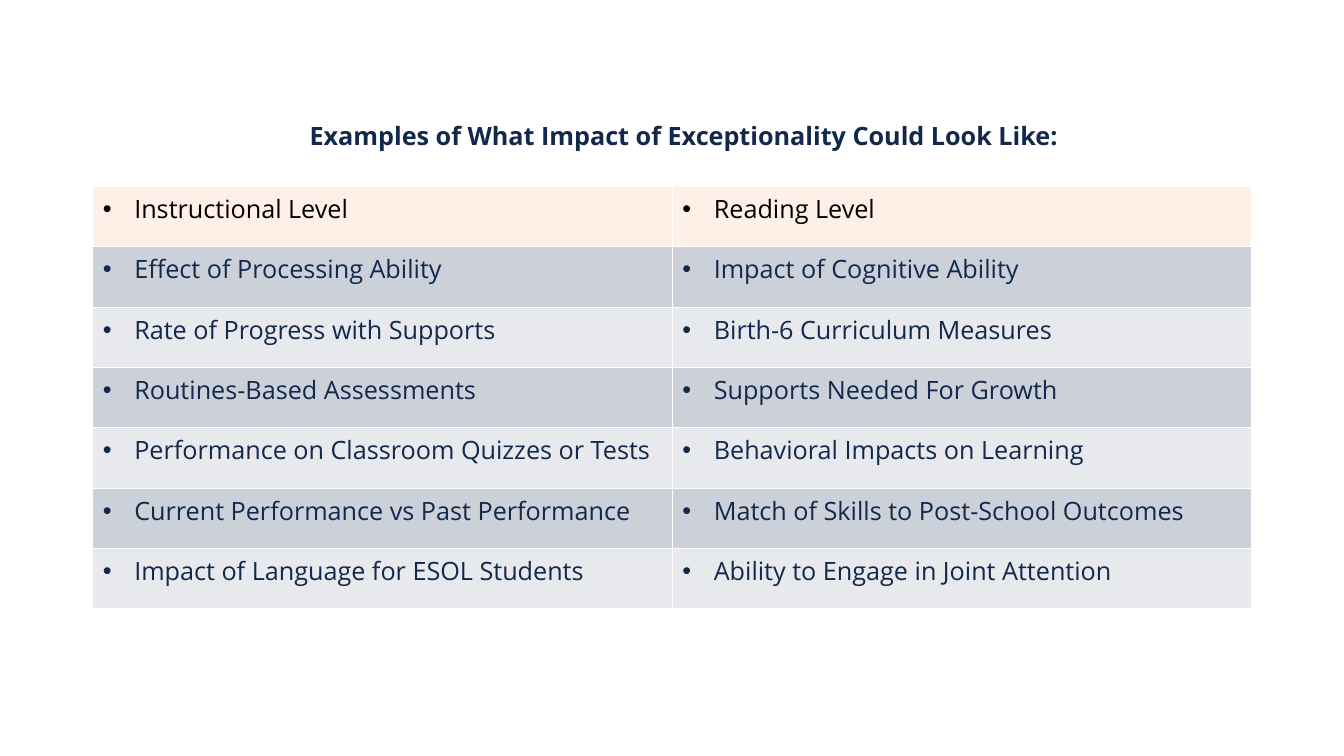
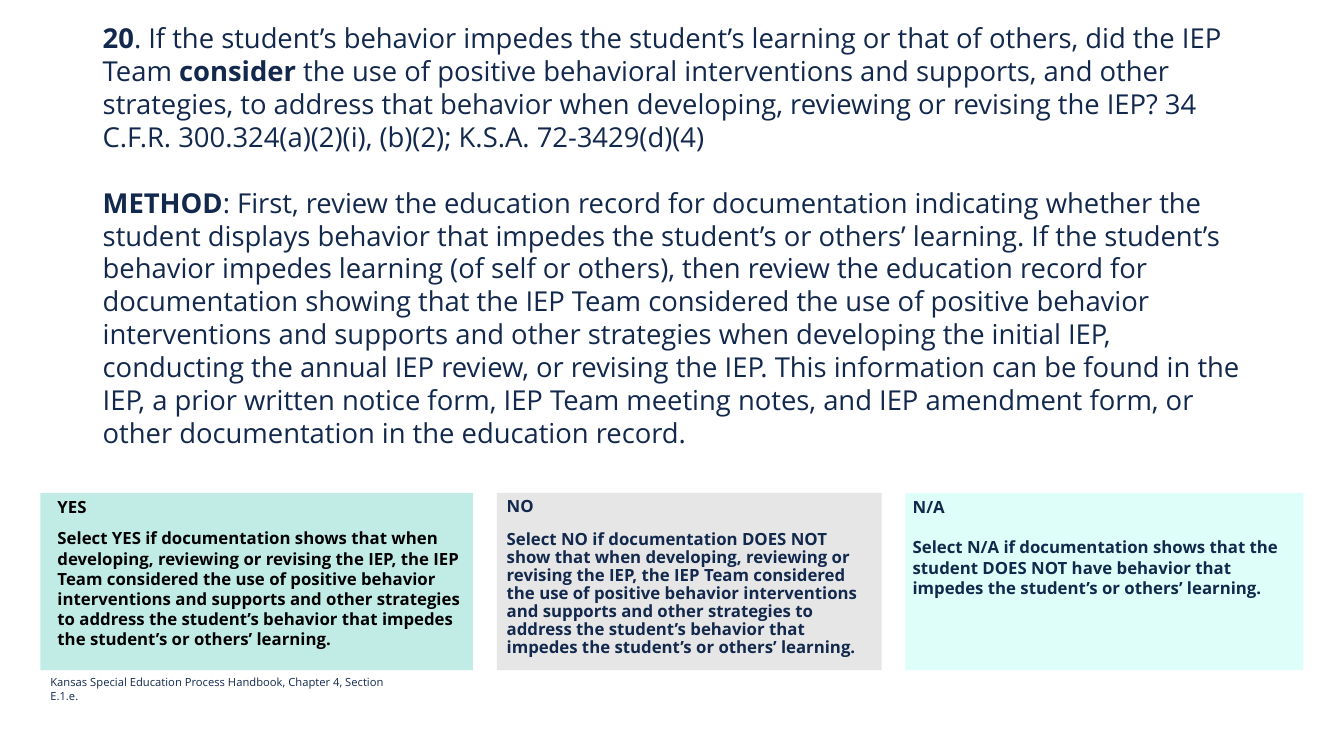
from lxml import etree
from pptx import Presentation
from pptx.dml.color import RGBColor
from pptx.enum import shapes, text
from pptx.oxml import ns
from pptx.util import Cm, Pt

FONT = "Open Sans"
NAVY = RGBColor(0x12, 0x28, 0x4C)
BLACK = RGBColor(0x00, 0x00, 0x00)
PEACH = RGBColor(0xFF, 0xF0, 0xE7)
BAND_DARK = RGBColor(0xCC, 0xD1, 0xD9)
BAND_LIGHT = RGBColor(0xE7, 0xE9, 0xED)
MINT = RGBColor(0xC1, 0xEC, 0xE5)
GREY = RGBColor(0xE6, 0xE6, 0xE6)
AQUA = RGBColor(0xDE, 0xFF, 0xF9)

CONTENT_LEFT = Cm(2.34)
CONTENT_WIDTH = Cm(29.21)

EXAMPLES = [
    ("Instructional Level", "Reading Level"),
    ("Effect of Processing Ability", "Impact of Cognitive Ability"),
    ("Rate of Progress with Supports", "Birth-6 Curriculum Measures"),
    ("Routines-Based Assessments", "Supports Needed For Growth"),
    ("Performance on Classroom Quizzes or Tests", "Behavioral Impacts on Learning"),
    ("Current Performance vs Past Performance", "Match of Skills to Post-School Outcomes"),
    ("Impact of Language for ESOL Students", "Ability to Engage in Joint Attention"),
]

QUESTION = [
    "**20**. If the student’s behavior impedes the student’s learning or that of others, "
    "did the IEP Team **consider** the use of positive behavioral interventions and supports, "
    "and other strategies, to address that behavior when developing, reviewing or revising "
    "the IEP? 34 C.F.R. 300.324(a)(2)(i), (b)(2); K.S.A. 72-3429(d)(4)",
    "**METHOD**: First, review the education record for documentation indicating whether the "
    "student displays behavior that impedes the student’s or others’ learning. If the "
    "student’s behavior impedes learning (of self or others), then review the education "
    "record for documentation showing that the IEP Team considered the use of positive "
    "behavior interventions and supports and other strategies when developing the initial "
    "IEP, conducting the annual IEP review, or revising the IEP. This information can be "
    "found in the IEP, a prior written notice form, IEP Team meeting notes, and IEP "
    "amendment form, or other documentation in the education record.",
]

CONSIDERED = (
    "show{} that when developing, reviewing or revising the IEP, the IEP Team considered the "
    "use of positive behavior interventions and supports and other strategies to address the "
    "student’s behavior that impedes the student’s or others’ learning."
)

# answer, guidance, width in cm, fill, margins in cm (side, top), text format
ANSWERS = [
    ("YES", "Select YES if documentation " + CONSIDERED.format("s"), 10.9, MINT, (0.18, 0.1),
     dict(color=BLACK, leading=14.4, gap=8, indent=Cm(0.25))),
    ("NO", "Select NO if documentation DOES NOT " + CONSIDERED.format(""), 9.7, GREY, (0.25, 0.13),
     dict(leading=12.9, gap=10.5)),
    ("N/A", "Select N/A if documentation shows that the student DOES NOT have behavior that "
     "impedes the student’s or others’ learning.", 10.03, AQUA, (0.18, 0.1),
     dict(leading=14.4, gap=14.4)),
]


def set_indent(paragraph, left, hanging=0, bullet=None):
    props = paragraph._p.get_or_add_pPr()
    props.set("marL", str(left))
    props.set("indent", str(-hanging))
    if bullet:
        etree.SubElement(props, ns.qn("a:buFont"), typeface="Arial")
        etree.SubElement(props, ns.qn("a:buChar"), char=bullet)


def write(frame, paragraphs, size=18, color=NAVY, bold=False, align=text.PP_ALIGN.LEFT,
          leading=None, gap=0, indent=0, hanging=0, bullet=None):
    """Fill a text frame; parts between ** marks are bold."""
    frame.word_wrap = True
    for index, content in enumerate(paragraphs):
        paragraph = frame.paragraphs[0] if index == 0 else frame.add_paragraph()
        if indent:
            set_indent(paragraph, indent, hanging, bullet)
        paragraph.alignment = align
        if leading:
            paragraph.line_spacing = Pt(leading)
        if index:
            paragraph.space_before = Pt(gap)
        for part, words in enumerate(content.split("**")):
            if not words:
                continue
            run = paragraph.add_run()
            run.text = words
            run.font.name = FONT
            run.font.size = Pt(size)
            run.font.bold = bold or part % 2 == 1
            run.font.color.rgb = color


def add_text(slide, left, top, width, height, paragraphs, anchor=text.MSO_ANCHOR.TOP, **style):
    frame = slide.shapes.add_textbox(left, top, width, height).text_frame
    frame.vertical_anchor = anchor
    write(frame, paragraphs, **style)


def add_card(slide, left, top, width, height, fill, margins, paragraphs, **style):
    card = slide.shapes.add_shape(shapes.MSO_SHAPE.RECTANGLE, left, top, width, height)
    card.shadow.inherit = False
    card.fill.solid()
    card.fill.fore_color.rgb = fill
    card.line.fill.background()
    frame = card.text_frame
    frame.vertical_anchor = text.MSO_ANCHOR.TOP
    side, upper = margins
    frame.margin_left = frame.margin_right = Cm(side)
    frame.margin_top = frame.margin_bottom = Cm(upper)
    write(frame, paragraphs, **style)


def set_borders(cell, color="FFFFFF", width=Pt(1)):
    props = cell._tc.get_or_add_tcPr()
    for position, side in enumerate(("lnL", "lnR", "lnT", "lnB")):
        border = etree.Element(ns.qn("a:" + side), w=str(width))
        fill = etree.SubElement(border, ns.qn("a:solidFill"))
        etree.SubElement(fill, ns.qn("a:srgbClr"), val=color)
        props.insert(position, border)


def add_examples_table(slide, rows, left, top, width, row_height):
    columns = len(rows[0])
    table = slide.shapes.add_table(
        len(rows), columns, left, top, width, row_height * len(rows)).table
    for row, labels in enumerate(rows):
        table.rows[row].height = row_height
        band = PEACH if row == 0 else (BAND_LIGHT, BAND_DARK)[row % 2]
        for column, label in enumerate(labels):
            cell = table.cell(row, column)
            cell.fill.solid()
            cell.fill.fore_color.rgb = band
            set_borders(cell)
            write(cell.text_frame, [label], color=NAVY if row else BLACK,
                  indent=Cm(0.79), hanging=Cm(0.79), bullet="•")


def build_examples(slide):
    add_text(slide, Cm(4.6), Cm(2.9), Cm(25.27), Cm(1.02),
             ["Examples of What Impact of Exceptionality Could Look Like:"],
             anchor=text.MSO_ANCHOR.MIDDLE, bold=True, align=text.PP_ALIGN.CENTER)
    add_examples_table(slide, EXAMPLES, CONTENT_LEFT, Cm(4.7), CONTENT_WIDTH, Cm(1.52))


def build_question(slide):
    add_text(slide, CONTENT_LEFT, Cm(0.41), CONTENT_WIDTH, Cm(11.66), QUESTION,
             size=19.6, leading=23.5, gap=23.5)
    margin, gutter = Cm(1.02), Cm(0.6)
    left = margin
    for answer, guidance, width, fill, margins, style in ANSWERS:
        add_card(slide, left, Cm(12.42), Cm(width), Cm(4.47), fill, margins,
                 [answer, guidance], size=12, bold=True, **style)
        left += Cm(width) + gutter
    add_text(slide, margin, Cm(16.89), Cm(9.47), Cm(0.61),
             ["Kansas Special Education Process Handbook, Chapter 4, Section E.1.e."],
             size=8, leading=10)


def main():
    deck = Presentation()
    deck.slide_width, deck.slide_height = Cm(33.87), Cm(19.05)
    blank = deck.slide_layouts[6]
    for build in (build_examples, build_question):
        build(deck.slides.add_slide(blank))
    deck.save("out.pptx")


if __name__ == "__main__":
    main()
